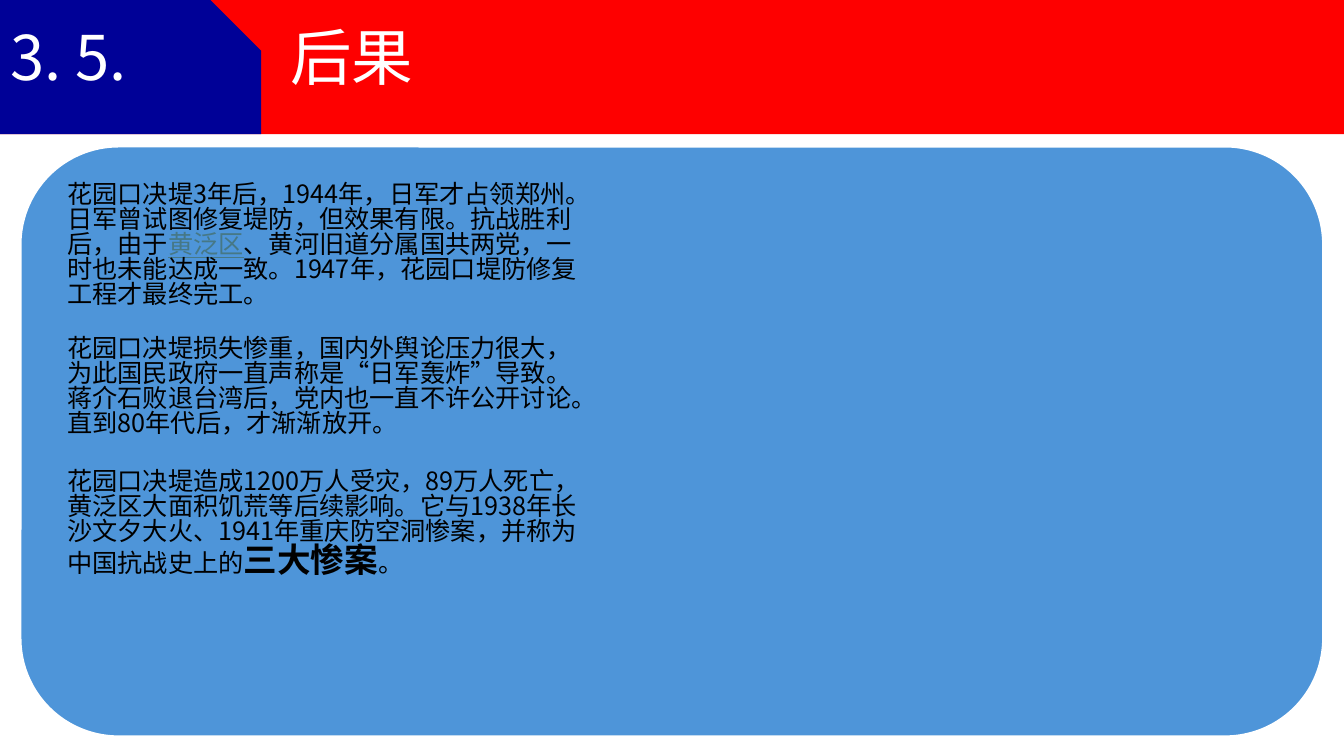
import pptx
import pptx.dml.color
import pptx.enum.shapes
import pptx.enum.text
import pptx.oxml.ns
import pptx.util
from lxml import etree

Pt = pptx.util.Pt
MSO_SHAPE = pptx.enum.shapes.MSO_SHAPE
FONT = "Noto Sans CJK SC"
COLORS = {"panel": "4E95D9", "banner": "FE0000", "tab": "000197",
          "white": "FFFFFF", "text": "000000", "term": "467886"}


def rgb(name):
    return pptx.dml.color.RGBColor.from_string(COLORS[name])


def set_font(paragraph, size, color):
    """Set size, colour and the Latin and East Asian typeface of a paragraph."""
    font = paragraph.font
    font.size = Pt(size)
    font.color.rgb = rgb(color)
    font.name = FONT
    properties = paragraph._p.pPr.find(pptx.oxml.ns.qn("a:defRPr"))
    etree.SubElement(properties, pptx.oxml.ns.qn("a:ea"), typeface=FONT)


presentation = pptx.Presentation()
presentation.slide_width = Pt(960)
presentation.slide_height = Pt(540)
slide = presentation.slides.add_slide(presentation.slide_layouts[5])

# Panel, banner and number tab
backdrops = [
    (MSO_SHAPE.ROUNDED_RECTANGLE, 14.4, 104.4, 931, 421.9, "panel"),
    (MSO_SHAPE.RECTANGLE, -5.8, -8.6, 971.3, 104.4, "banner"),
    (MSO_SHAPE.SNIP_ROUND_RECTANGLE, -10.1, -8.6, 196.6, 104.4, "tab"),
]
for kind, left, top, width, height, color in backdrops:
    shape = slide.shapes.add_shape(kind, Pt(left), Pt(top), Pt(width), Pt(height))
    shape.shadow.inherit = False
    shape.fill.solid()
    shape.fill.fore_color.rgb = rgb(color)
    if color == "panel":
        shape.line.color.rgb = rgb("white")
        shape.line.width = Pt(2)
    else:
        shape.line.fill.background()
    if color == "tab":
        shape.adjustments[0] = 0
        shape.adjustments[1] = 0.43

# Title, brought in front of the banner
title = slide.shapes.title
slide.shapes._spTree.append(title._element)
title.left, title.top, title.width, title.height = Pt(0), Pt(-8.6), Pt(828), Pt(104.4)
title.text_frame.vertical_anchor = pptx.enum.text.MSO_ANCHOR.MIDDLE
title.text_frame.auto_size = pptx.enum.text.MSO_AUTO_SIZE.NONE
title.text_frame.text = "3. 5.\t后果"
paragraph = title.text_frame.paragraphs[0]
paragraph.alignment = pptx.enum.text.PP_ALIGN.LEFT
paragraph.line_spacing = 0.9
tab_stops = etree.SubElement(paragraph._p.get_or_add_pPr(), pptx.oxml.ns.qn("a:tabLst"))
etree.SubElement(tab_stops, pptx.oxml.ns.qn("a:tab"), pos=str(Pt(200)), algn="l")
set_font(paragraph, 44, "white")

# Text blocks: top, height, runs with their style
passages = [
    (127.4, 116.6, [
        ("花园口决堤3年后，1944年，日军才占领郑州。日军曾试图修复堤防，但效果有限。抗战胜利后，由于", None),
        ("黄泛区", "term"),
        ("、黄河旧道分属国共两党，一时也未能达成一致。1947年，花园口堤防修复工程才最终完工。", None)]),
    (237.6, 94.3, [
        ("花园口决堤损失惨重，国内外舆论压力很大，为此国民政府一直声称是“日军轰炸”导致。"
         "蒋介石败退台湾后，党内也一直不许公开讨论。直到80年代后，才渐渐放开。", None)]),
    (332.6, 145.4, [
        ("花园口决堤造成1200万人受灾，89万人死亡，黄泛区大面积饥荒等后续影响。"
         "它与1938年长沙文夕大火、1941年重庆防空洞惨案，并称为中国抗战史上的", None),
        ("三大惨案", "strong"),
        ("。", None)]),
]
for top, height, runs in passages:
    box = slide.shapes.add_textbox(Pt(41), Pt(top), Pt(391.7), Pt(height))
    box.text_frame.word_wrap = True
    paragraph = box.text_frame.paragraphs[0]
    paragraph.line_spacing = 0.83
    set_font(paragraph, 18, "text")
    for text, style in runs:
        run = paragraph.add_run()
        run.text = text
        if style == "term":
            run.font.color.rgb = rgb("term")
            run.font.underline = True
        elif style == "strong":
            run.font.size = Pt(24)
            run.font.bold = True

presentation.save("out.pptx")
